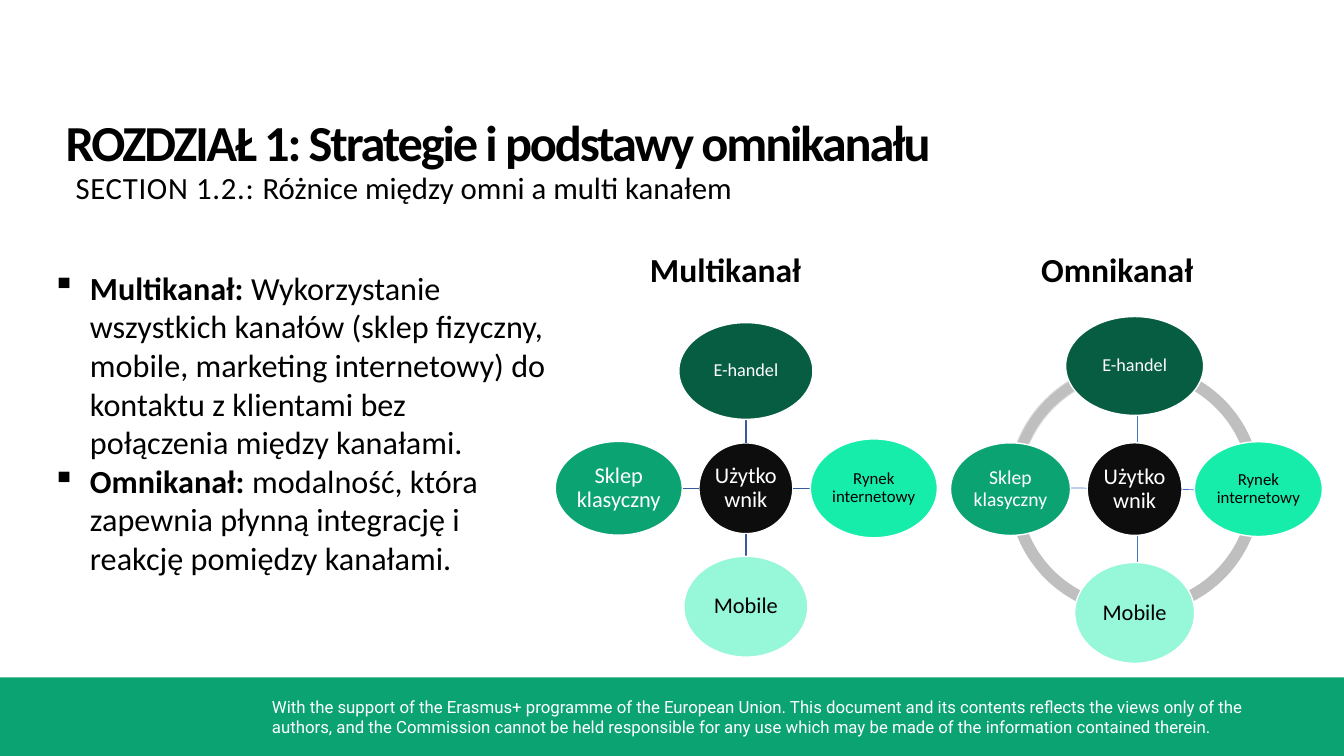
import pptx
import pptx.util
import pptx.dml.color
import pptx.enum.shapes
import pptx.enum.text
import lxml.etree

Pt = pptx.util.Pt
SHAPES = pptx.enum.shapes.MSO_SHAPE

THEME = {
    "font": "Calibri", "footer_font": "Roboto",
    "black": "000000", "white": "FFFFFF", "hub": "0D0D0D",
    "dark": "075D42", "green": "0CA373", "bright": "17EDAB", "pale": "97F7D9",
    "ring": "BFBFBF", "ring_edge": "D9D9D9", "spoke": "365B9D", "axis": "4472C4",
    "title": 36, "section": 22, "body": 23, "heading": 24,
    "large": 16, "medium": 14, "small": 13, "tiny": 12,
}

TITLE = "ROZDZIAŁ 1: Strategie i podstawy omnikanału"
SECTION = ("SECTION 1.2.: ", "Różnice między omni a multi kanałem")
DEFINITIONS = [
    ("Multikanał: ", "Wykorzystanie wszystkich kanałów (sklep fizyczny, mobile, "
     "marketing internetowy) do kontaktu z klientami bez połączenia między kanałami."),
    ("Omnikanał: ", "modalność, która zapewnia płynną integrację i reakcję "
     "pomiędzy kanałami."),
]
FOOTER = ("With the support of the Erasmus+ programme of the European Union. This document "
          "and its contents reflects the views only of the authors, and the Commission cannot "
          "be held responsible for any use which may be made of the information contained therein.")

HUB = ("Użytkownik", "hub", "white")
CHANNELS = [
    ("E-handel", "dark", "white", (0, -1)),
    ("Rynek internetowy", "bright", "black", (1, 0)),
    ("Mobile", "pale", "black", (0, 1)),
    ("Sklep klasyczny", "green", "white", (-1, 0)),
]
MULTI = {
    "heading": "Multikanał", "heading_left": 457.2, "center": (532.8, 348.8),
    "hub_size": (67, 64.8), "inset": 0.7,
    "sizes": [(95.8, 69.1), (90.7, 70.6), (88.6, 72), (90.7, 67)],
    "reach": [83.8, 91.4, 84.6, 90.8],
    "type": ["small", "tiny", "large", "large"],
}
OMNI = {
    "heading": "Omnikanał", "heading_left": 736.6, "center": (810.5, 349.4),
    "hub_size": (67.7, 66.2), "inset": 1.4,
    "sizes": [(98.6, 70.6), (91.4, 67.7), (85.7, 72), (85.7, 66.2)],
    "reach": [88, 88.4, 88.4, 88.7],
    "type": ["small", "tiny", "large", "medium"],
}
OMNI_AXES = [((763.2, 348.5), (860.4, 349.9)), ((812.2, 294.5), (812.2, 401.8))]
RING_SIZE = 180.7
RING_THICKNESS = 0.046

deck = pptx.Presentation()
deck.slide_width, deck.slide_height = Pt(960), Pt(540)
slide = deck.slides.add_slide(deck.slide_layouts[6])


def color(name):
    return pptx.dml.color.RGBColor.from_string(THEME[name])


def write(frame, paragraphs, size, ink="black", font="font", align=None, anchor="TOP",
          insets=(7.2, 3.6, 7.2, 3.6), leading=None, bullet=None, hanging=0):
    frame.word_wrap = True
    frame.vertical_anchor = pptx.enum.text.MSO_ANCHOR[anchor]
    frame.margin_left, frame.margin_top, frame.margin_right, frame.margin_bottom = map(Pt, insets)
    for index, runs in enumerate(paragraphs):
        paragraph = frame.paragraphs[0] if index == 0 else frame.add_paragraph()
        if bullet:
            properties = paragraph._p.get_or_add_pPr()
            properties.set("marL", str(Pt(hanging)))
            properties.set("indent", str(-Pt(hanging)))
            mark = lxml.etree.SubElement(properties, pptx.oxml.ns.qn("a:buChar"))
            mark.set("char", bullet)
        if align:
            paragraph.alignment = pptx.enum.text.PP_ALIGN[align]
        if leading:
            paragraph.line_spacing = leading
        for words, bold, spacing in runs:
            run = paragraph.add_run()
            run.text = words
            run.font.name = THEME[font]
            run.font.size = Pt(THEME[size])
            run.font.bold = bold
            run.font.color.rgb = color(ink)
            if spacing:
                run.font._element.set("spc", str(round(spacing * 100)))


def text_box(box, paragraphs, size, **style):
    write(slide.shapes.add_textbox(*map(Pt, box)).text_frame, paragraphs, size, **style)


def add_filled(kind, box, fill, edge=None, weight=1):
    shape = slide.shapes.add_shape(kind, *map(Pt, box))
    shape.shadow.inherit = False
    shape.fill.solid()
    shape.fill.fore_color.rgb = color(fill)
    if edge:
        shape.line.color.rgb = color(edge)
        shape.line.width = Pt(weight)
    else:
        shape.line.fill.background()
    return shape


def add_line(start, end, ink, weight):
    line = slide.shapes.add_connector(
        pptx.enum.shapes.MSO_CONNECTOR.STRAIGHT, *map(Pt, (*start, *end)))
    line.line.color.rgb = color(ink)
    line.line.width = Pt(weight)
    lxml.etree.SubElement(line._element.spPr, pptx.oxml.ns.qn("a:effectLst"))


def centered(center, size):
    return (center[0] - size[0] / 2, center[1] - size[1] / 2, *size)


def add_bubble(center, size, words, fill, ink, type_size, inset):
    bubble = add_filled(SHAPES.OVAL, centered(center, size), fill, "white")
    write(bubble.text_frame, [[(words, False, 0)]], type_size, ink=ink, align="CENTER",
          anchor="MIDDLE", insets=(inset,) * 4, leading=0.9)


def add_diagram(model, spokes):
    x, y = model["center"]
    hub_width, hub_height = model["hub_size"]
    add_bubble((x, y), model["hub_size"], *HUB, "large", model["inset"])
    for channel, size, reach, type_size in zip(
            CHANNELS, model["sizes"], model["reach"], model["type"]):
        words, fill, ink, (dx, dy) = channel
        if spokes:
            add_line((x + dx * hub_width / 2, y + dy * hub_height / 2),
                     (x + dx * (reach - size[0] / 2), y + dy * (reach - size[1] / 2)),
                     "spoke", 1)
        add_bubble((x + dx * reach, y + dy * reach), size, words, fill, ink,
                   type_size, model["inset"])
    text_box((model["heading_left"], 174.2, 151.2, 36),
             [[(model["heading"], True, 0)]], "heading")


def add_ring():
    quarter = 54
    for start in (108, 54, 0, 162):
        arc = add_filled(SHAPES.BLOCK_ARC, centered(OMNI["center"], (RING_SIZE, RING_SIZE)),
                         "ring", "ring_edge" if start == 108 else None, 0.75)
        arc.adjustments[0] = start
        arc.adjustments[1] = (start + quarter) % (4 * quarter)
        arc.adjustments[2] = RING_THICKNESS


def main():
    add_filled(SHAPES.RECTANGLE, (0, 483.8, 960, 56.2), "green")
    text_box((187.2, 493.9, 737.4, 36), [[(FOOTER, False, 0)]], "tiny",
             ink="white", font="footer_font")
    for start, end in OMNI_AXES:
        add_line(start, end, "axis", 0.5)
    text_box((46.8, 78.5, 634.3, 44.6), [[(TITLE, True, -1.5)]], "title",
             insets=(0, 0.7, 0, 0))
    text_box((54, 118.8, 568.8, 48.2),
             [[(SECTION[0], False, 0.5), (SECTION[1], False, 0)]], "section",
             insets=(0, 1.4, 0, 0))
    text_box((30.2, 187.9, 371.5, 230.4),
             [[(term, True, 0), (meaning, False, 0)] for term, meaning in DEFINITIONS],
             "body", bullet="▪", hanging=27)
    add_diagram(MULTI, spokes=True)
    add_ring()
    add_diagram(OMNI, spokes=False)
    deck.save("out.pptx")


if __name__ == "__main__":
    main()
